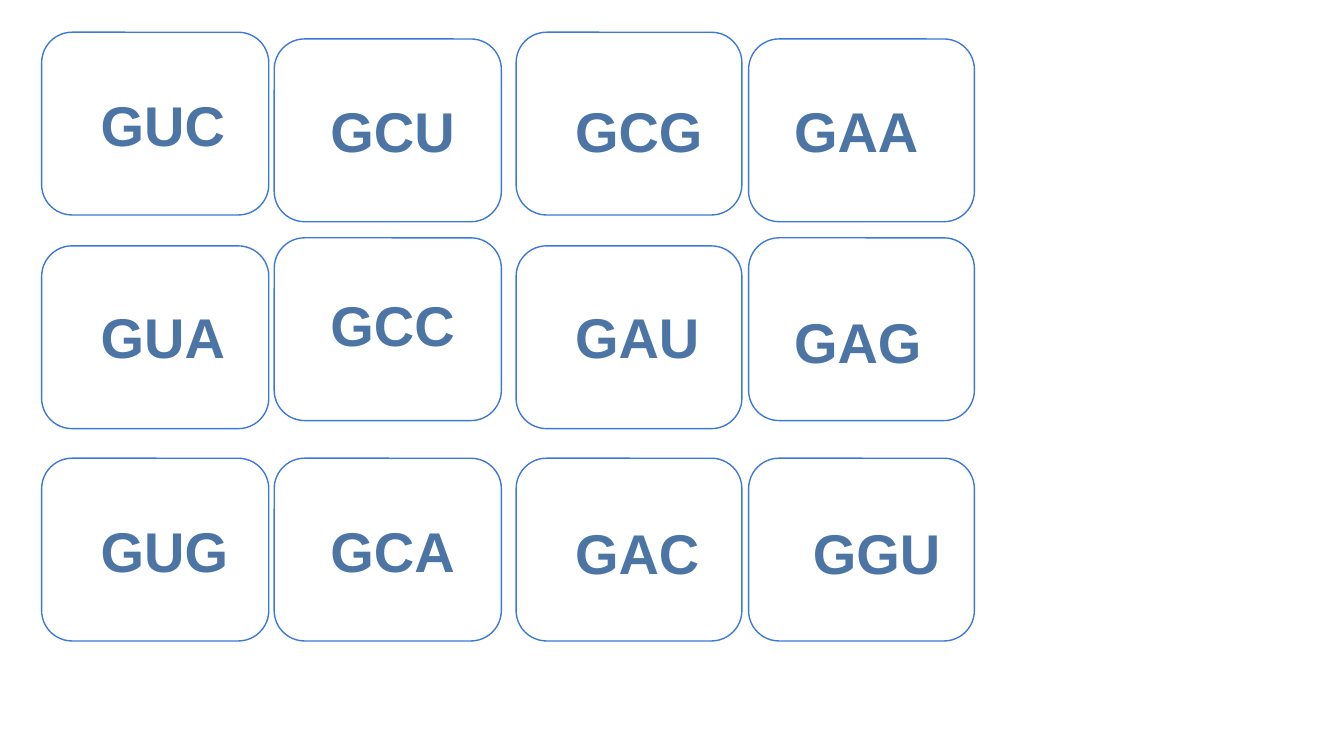
from pptx import Presentation
from pptx.dml.color import RGBColor
from pptx.enum.shapes import MSO_SHAPE as Shape
from pptx.enum.text import MSO_AUTO_SIZE as AutoSize
from pptx.util import Inches, Pt

COLORS = {"card": "FFFFFF", "border": "3C78D8", "codon": "4C75A6"}
CARD_HEIGHT = 13.6
LABEL_SIZE = (32.8, 7.1)
STRAIGHT_TOPS = (2.4, 18.3, 34.1)
SHIFTED_TOPS = (2.9, 17.7, 34.1)

# Each half of the slide holds two columns of cards:
# card left, card width, card tops, and labels as (codon, left, top).
HALVES = [
    [
        (3.1, 16.9, STRAIGHT_TOPS,
         [("GUC", 6.5, 5.7), ("GUA", 6.5, 21.5), ("GUG", 6.5, 37.4)]),
        (20.4, 16.9, SHIFTED_TOPS,
         [("GCU", 23.6, 6.2), ("GCC", 23.6, 20.6), ("GCA", 23.6, 37.4)]),
    ],
    [
        (38.4, 16.8, STRAIGHT_TOPS,
         [("GCG", 41.8, 6.2), ("GAU", 41.8, 21.5), ("GAC", 41.8, 37.6)]),
        (55.7, 16.8, SHIFTED_TOPS,
         [("GAA", 58.1, 6.2), ("GAG", 58.1, 21.9), ("GGU", 59.5, 37.6)]),
    ],
]


class CodonSlide:
    """Draws on a grid of square cells, 100 columns across the slide."""

    font_name = "Arial"
    font_size = Pt(30)

    def __init__(self, presentation):
        self.slide = presentation.slides.add_slide(presentation.slide_layouts[6])

    @staticmethod
    def grid(*cells):
        return [Inches(cell / 10) for cell in cells]

    @staticmethod
    def color(name):
        return RGBColor.from_string(COLORS[name])

    def card(self, left, top, width):
        shape = self.slide.shapes.add_shape(
            Shape.ROUNDED_RECTANGLE, *self.grid(left, top, width, CARD_HEIGHT))
        shape.shadow.inherit = False
        shape.fill.solid()
        shape.fill.fore_color.rgb = self.color("card")
        shape.line.color.rgb = self.color("border")
        shape.line.width = Pt(0.75)

    def label(self, codon, left, top):
        frame = self.slide.shapes.add_textbox(
            *self.grid(left, top, *LABEL_SIZE)).text_frame
        frame.word_wrap = True
        frame.auto_size = AutoSize.SHAPE_TO_FIT_TEXT
        frame.margin_left = frame.margin_right = Inches(0.1)
        frame.margin_top = frame.margin_bottom = Inches(0.1)
        paragraph = frame.paragraphs[0]
        paragraph.text = codon
        font = paragraph.font
        font.name, font.size, font.bold = self.font_name, self.font_size, True
        font.color.rgb = self.color("codon")


def main():
    presentation = Presentation()
    presentation.slide_width = Inches(10)
    presentation.slide_height = Inches(10 * 9 / 16)
    codon_slide = CodonSlide(presentation)
    for half in HALVES:
        for left, width, tops, _ in half:
            for top in tops:
                codon_slide.card(left, top, width)
        for *_, labels in half:
            for label in labels:
                codon_slide.label(*label)
    presentation.save("out.pptx")


if __name__ == "__main__":
    main()
